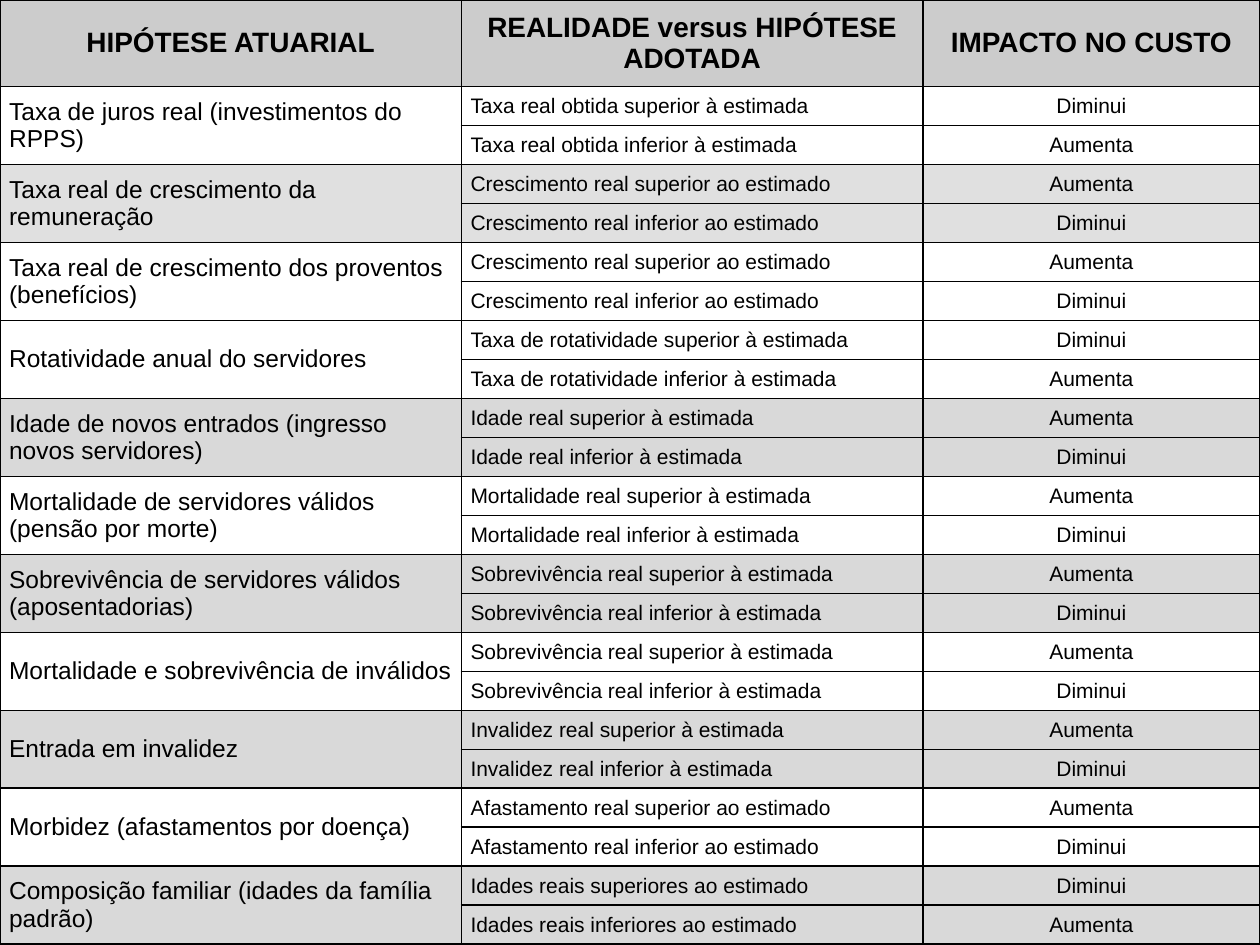
from dataclasses import dataclass
from typing import Optional

from lxml import etree
from pptx import Presentation
from pptx.dml.color import RGBColor
from pptx.enum import text
from pptx.oxml import ns
from pptx.util import Pt

BLACK = RGBColor(0x00, 0x00, 0x00)
WHITE = RGBColor(0xFF, 0xFF, 0xFF)
HEAD = RGBColor(0xCC, 0xCC, 0xCC)
LIGHT = RGBColor(0xE0, 0xE0, 0xE0)
GREY = RGBColor(0xD9, 0xD9, 0xD9)

WIDE, HIGH = 720, 540
COLS = (263.7, 263.7, 192.6)
TOP = 49.4
LEFT, MID = text.PP_ALIGN.LEFT, text.PP_ALIGN.CENTER
UP, DOWN = "Aumenta", "Diminui"


@dataclass
class Group:
    name: str
    fact: str  # {} takes "superior", then "inferior"
    fill: Optional[RGBColor] = None
    rises: bool = True  # whether a higher value raises the cost


TITLES = ("HIPÓTESE ATUARIAL", "REALIDADE versus HIPÓTESE ADOTADA",
          "IMPACTO NO CUSTO")
GROUPS = (
    Group("Taxa de juros real (investimentos do RPPS)",
          "Taxa real obtida {} à estimada", WHITE, False),
    Group("Taxa real de crescimento da remuneração",
          "Crescimento real {} ao estimado", LIGHT),
    Group("Taxa real de crescimento dos proventos (benefícios)",
          "Crescimento real {} ao estimado", WHITE),
    Group("Rotatividade anual do servidores",
          "Taxa de rotatividade {} à estimada", rises=False),
    Group("Idade de novos entrados (ingresso novos servidores)",
          "Idade real {} à estimada", GREY),
    Group("Mortalidade de servidores válidos (pensão por morte)",
          "Mortalidade real {} à estimada"),
    Group("Sobrevivência de servidores válidos (aposentadorias)",
          "Sobrevivência real {} à estimada", GREY),
    Group("Mortalidade e sobrevivência de inválidos",
          "Sobrevivência real {} à estimada"),
    Group("Entrada em invalidez", "Invalidez real {} à estimada", GREY),
    Group("Morbidez (afastamentos por doença)",
          "Afastamento real {} ao estimado"),
    Group("Composição familiar (idades da família padrão)",
          "Idades reais {}es ao estimado", GREY, False),
)


def frame(cell) -> None:
    """Draw a thin black line on each side of a cell."""
    props = cell._tc.get_or_add_tcPr()
    for side in ("lnL", "lnR", "lnT", "lnB"):
        line = etree.SubElement(props, ns.qn(f"a:{side}"), w=str(Pt(1)))
        fill = etree.SubElement(line, ns.qn("a:solidFill"))
        etree.SubElement(fill, ns.qn("a:srgbClr"), val=str(BLACK))


def paint(cell, fill: Optional[RGBColor]) -> None:
    frame(cell)
    if fill is None:
        cell.fill.background()
    else:
        cell.fill.solid()
        cell.fill.fore_color.rgb = fill


def write(cell, words: str, size: int, align, bold: bool = False) -> None:
    cell.margin_left = cell.margin_right = Pt(5.2)
    cell.margin_top = cell.margin_bottom = Pt(2.6)
    cell.vertical_anchor = text.MSO_ANCHOR.MIDDLE
    cell.text = words
    para = cell.text_frame.paragraphs[0]
    para.alignment = align
    font = para.font
    font.name, font.size, font.bold = "Arial", Pt(size), bold
    font.color.rgb = BLACK


def add_group(table, row: int, group: Group) -> None:
    for line in (row, row + 1):
        for col in range(len(COLS)):
            paint(table.cell(line, col), group.fill)
    name = table.cell(row, 0)
    name.merge(table.cell(row + 1, 0))
    write(name, group.name, 14, LEFT)
    costs = (UP, DOWN) if group.rises else (DOWN, UP)
    for step, (word, cost) in enumerate(zip(("superior", "inferior"), costs)):
        write(table.cell(row + step, 1), group.fact.format(word), 12, LEFT)
        write(table.cell(row + step, 2), cost, 12, MID)


def main() -> None:
    deck = Presentation()
    deck.slide_width, deck.slide_height = Pt(WIDE), Pt(HIGH)
    slide = deck.slides.add_slide(deck.slide_layouts[6])

    # Table grid
    count = 2 * len(GROUPS)
    table = slide.shapes.add_table(count + 1, len(COLS), Pt(0), Pt(0),
                                   Pt(WIDE), Pt(HIGH)).table
    table.first_row = table.horz_banding = False
    for col, width in zip(table.columns, COLS):
        col.width = Pt(width)
    for row in table.rows:
        row.height = Pt((HIGH - TOP) / count)
    table.rows[0].height = Pt(TOP)

    # Header row
    for col, title in enumerate(TITLES):
        cell = table.cell(0, col)
        paint(cell, HEAD)
        write(cell, title, 16, MID, True)

    # Two rows for each assumption
    for index, group in enumerate(GROUPS):
        add_group(table, 1 + 2 * index, group)

    deck.save("out.pptx")


if __name__ == "__main__":
    main()
